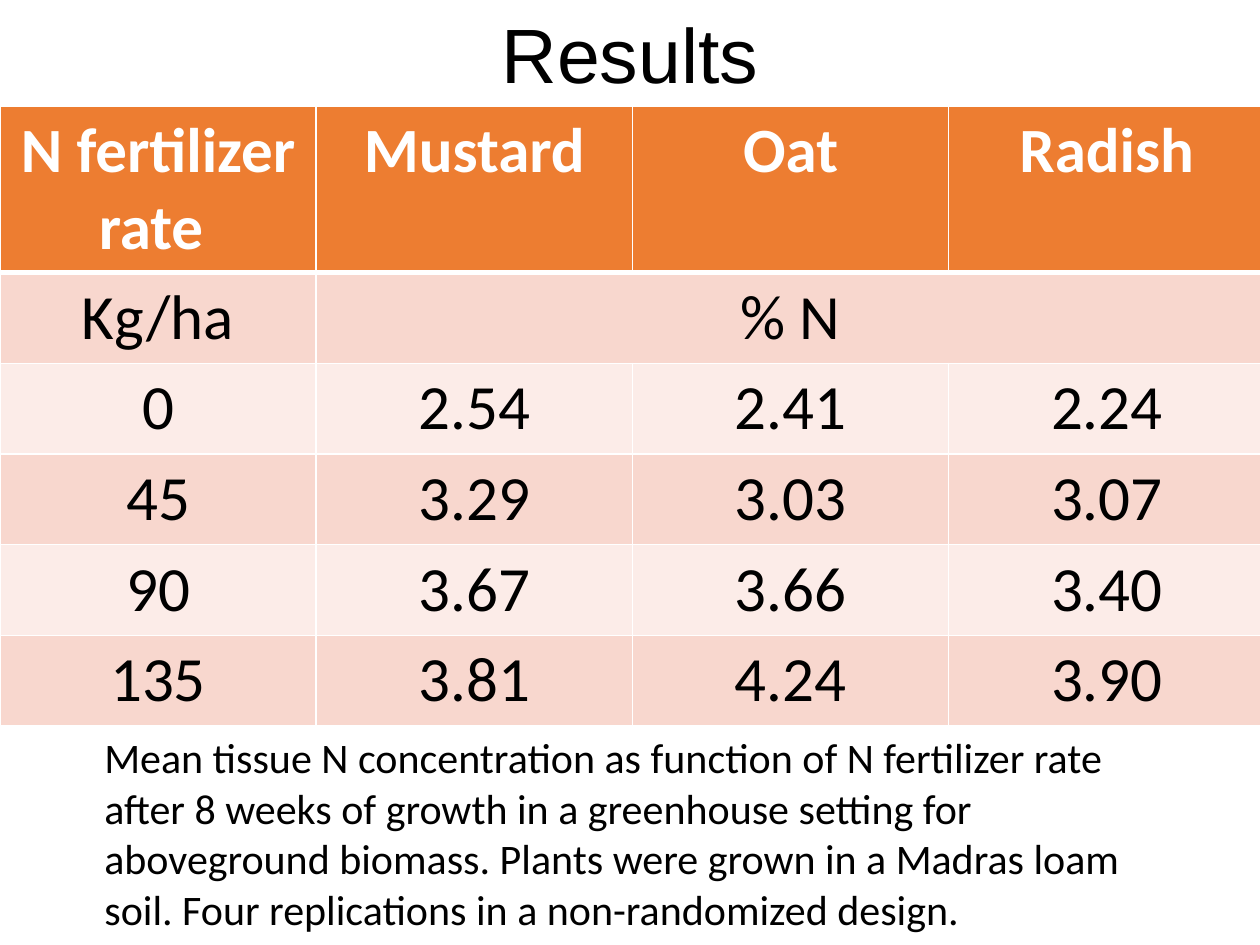
from dataclasses import dataclass

from lxml import etree
from pptx import Presentation
from pptx import util as u
from pptx.dml.color import RGBColor
from pptx.enum import text
from pptx.oxml import ns

COLORS = {
    "header": "ED7D31",
    "band_dark": "F8D7CE",
    "band_light": "FCECE8",
    "white": "FFFFFF",
    "black": "000000",
}


@dataclass(frozen=True)
class Style:
    size: float
    font: str = "Calibri"
    color: str = "black"
    bold: bool = False
    align: text.PP_ALIGN = text.PP_ALIGN.CENTER


@dataclass(frozen=True)
class RowStyle:
    fill: str
    text: Style
    top: float = 1
    bottom: float = 1


BODY = Style(36)
HEADER = RowStyle("header", Style(36, color="white", bold=True), bottom=3)
ROWS = [
    ("N fertilizer rate ", "Mustard", "Oat", "Radish"),
    ("Kg/ha", "% N", "", ""),
    ("0", "2.54", "2.41", "2.24"),
    ("45", "3.29", "3.03", "3.07"),
    ("90", "3.67", "3.66", "3.40"),
    ("135", "3.81", "4.24", "3.90"),
]
CAPTION = (
    "Mean tissue N concentration as function of N fertilizer rate after 8 weeks "
    "of growth in a greenhouse setting for aboveground biomass. Plants were grown "
    "in a Madras loam soil. Four replications in a non-randomized design."
)


def rgb(name: str) -> RGBColor:
    return RGBColor.from_string(COLORS[name])


def write(tf, content: str, style: Style) -> None:
    tf.text = content
    tf.word_wrap = True
    p = tf.paragraphs[0]
    p.alignment = style.align
    for r in p.runs:
        r.font.size = u.Pt(style.size)
        r.font.name = style.font
        r.font.bold = style.bold
        r.font.color.rgb = rgb(style.color)


def add_border(cell, side: str, width: float) -> None:
    tc_pr = cell._tc.get_or_add_tcPr()
    ln = etree.SubElement(tc_pr, ns.qn(f"a:ln{side}"), w=str(u.Pt(width)))
    fill = etree.SubElement(ln, ns.qn("a:solidFill"))
    etree.SubElement(fill, ns.qn("a:srgbClr"), val=COLORS["white"])


def row_style(index: int) -> RowStyle:
    if index == 0:
        return HEADER
    fill = "band_dark" if index % 2 else "band_light"
    return RowStyle(fill, BODY, top=HEADER.bottom if index == 1 else 1)


def add_results_table(s) -> None:
    table = s.shapes.add_table(
        len(ROWS), len(ROWS[0]), u.Inches(0), u.Inches(0.84), u.Inches(10.04), u.Inches(4.9)
    ).table
    for column in table.columns:
        column.width = u.Inches(2.51)
    for i, values in enumerate(ROWS):
        table.rows[i].height = u.Inches(0.72 if i else 1.3)
        style = row_style(i)
        for j, value in enumerate(values):
            cell = table.cell(i, j)
            for side, width in zip("LRTB", (1, 1, style.top, style.bottom)):
                add_border(cell, side, width)
            cell.fill.solid()
            cell.fill.fore_color.rgb = rgb(style.fill)
            write(cell.text_frame, value, style.text)
    table.cell(1, 1).merge(table.cell(1, 3))


def add_caption(s) -> None:
    sp = s.shapes.add_textbox(u.Inches(0.73), u.Inches(5.76), u.Inches(8.54), u.Inches(1.72))
    write(sp.text_frame, CAPTION, Style(24, align=text.PP_ALIGN.LEFT))


def format_title(s) -> None:
    title = s.shapes.title
    title.left, title.top = u.Inches(0), u.Inches(0)
    title.width, title.height = u.Inches(10), u.Inches(0.84)
    write(title.text_frame, "Results", Style(44, font="Arial"))
    title.text_frame.vertical_anchor = text.MSO_ANCHOR.TOP


def main() -> None:
    prs = Presentation()
    prs.slide_width, prs.slide_height = u.Inches(10), u.Inches(7.5)
    s = prs.slides.add_slide(prs.slide_layouts[5])
    add_results_table(s)
    add_caption(s)
    format_title(s)
    prs.save("out.pptx")


if __name__ == "__main__":
    main()
